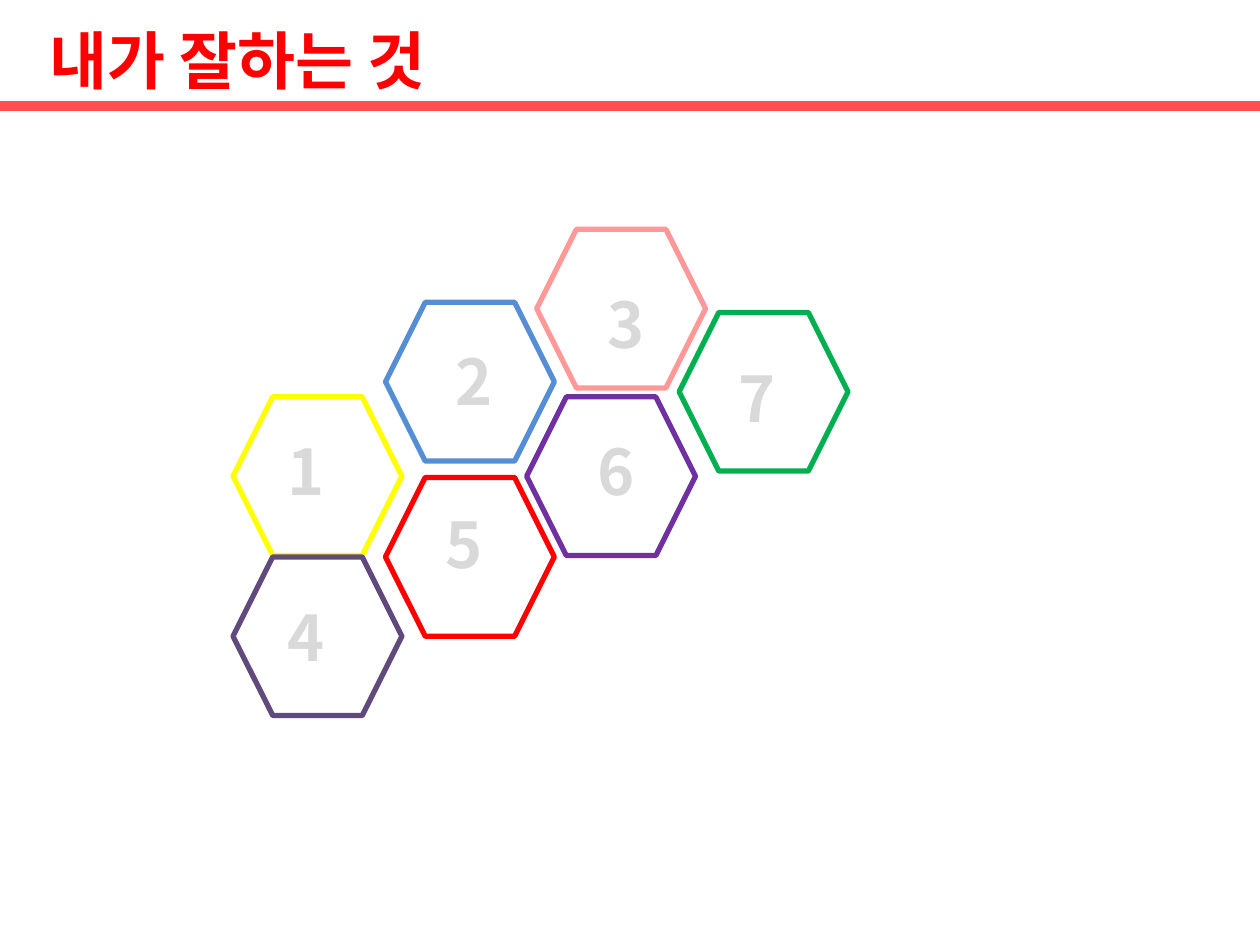
from lxml import etree
from pptx import Presentation
from pptx.dml.color import RGBColor
from pptx.enum.shapes import MSO_CONNECTOR, MSO_SHAPE
from pptx.enum.text import MSO_ANCHOR, MSO_AUTO_SIZE, PP_ALIGN
from pptx.oxml.ns import qn
from pptx.util import Inches, Pt

HEXAGON, RECTANGLE = MSO_SHAPE.HEXAGON, MSO_SHAPE.RECTANGLE
STRAIGHT = MSO_CONNECTOR.STRAIGHT
MIDDLE = MSO_ANCHOR.MIDDLE
LEFT, CENTER = PP_ALIGN.LEFT, PP_ALIGN.CENTER
FIT_SHAPE = MSO_AUTO_SIZE.SHAPE_TO_FIT_TEXT
FONT = "Noto Sans CJK KR"

# Content
TITLE = "내가 잘하는 것"
HEXAGON_SIZE = (1.34, 1.26)
# left, top, outline colour, from back to front
HEXAGONS = [
    (1.85, 3.15, "FFFF00"),
    (1.85, 4.42, "604A7B"),
    (3.06, 3.79, "FF0000"),
    (3.06, 2.40, "558ED5"),
    (4.26, 1.82, "FF9999"),
    (4.18, 3.15, "7030A0"),
    (5.39, 2.48, "00B050"),
]
LABEL_WIDTH = 0.6
# left, top, height; numbered in order
LABELS = [
    (2.13, 3.48, 0.5),
    (3.46, 2.73, 0.58),
    (4.67, 2.32, 0.5),
    (2.13, 4.80, 0.5),
    (3.38, 4.06, 0.5),
    (4.59, 3.48, 0.5),
    (5.71, 2.90, 0.5),
]


def color(value):
    return RGBColor.from_string(value)


def add_shape(page, kind, left, top, width, height):
    shape = page.shapes.add_shape(
        kind, Inches(left), Inches(top), Inches(width), Inches(height))
    shape.shadow.inherit = False
    return shape


def write(frame, text, text_color, align):
    frame.text = text
    frame.vertical_anchor = MIDDLE
    para = frame.paragraphs[0]
    para.alignment = align
    span = para.runs[0]
    span.font.name = FONT
    span.font.size = Pt(36)
    span.font.bold = True
    span.font.color.rgb = color(text_color)
    # Hangul takes the East Asian typeface
    east_asian = etree.Element(qn("a:ea"), typeface=FONT)
    span.font._element.find(qn("a:latin")).addnext(east_asian)


deck = Presentation()
deck.slide_width, deck.slide_height = Inches(10), Inches(7.5)
page = deck.slides.add_slide(deck.slide_layouts[5])

# Honeycomb
for left, top, outline in HEXAGONS:
    cell = add_shape(page, HEXAGON, left, top, *HEXAGON_SIZE)
    cell.fill.background()
    cell.line.color.rgb = color(outline)
    cell.line.width = Pt(3)

# Numbers
for number, (left, top, height) in enumerate(LABELS, start=1):
    label = add_shape(page, RECTANGLE, left, top, LABEL_WIDTH, height)
    label.fill.solid()
    label.fill.fore_color.rgb = color("FFFFFF")
    label.line.fill.background()
    write(label.text_frame, str(number), "D9D9D9", CENTER)

# Title
title = page.shapes.title
title.left, title.top = Inches(0), Inches(-0.05)
title.width, title.height = Inches(10), Inches(1.04)
frame = title.text_frame
frame.word_wrap = True
frame.auto_size = FIT_SHAPE
frame.margin_left = frame.margin_right = Inches(0.39)
frame.margin_top = frame.margin_bottom = Inches(0.2)
write(frame, TITLE, "FF0000", LEFT)

# Rule under the title
rule = page.shapes.add_connector(
    STRAIGHT, Inches(0), Inches(0.84), Inches(10), Inches(0.84))
rule.line.color.rgb = color("FF5050")
rule.line.width = Pt(6)
etree.SubElement(rule._element.spPr, qn("a:effectLst"))

deck.save("out.pptx")
